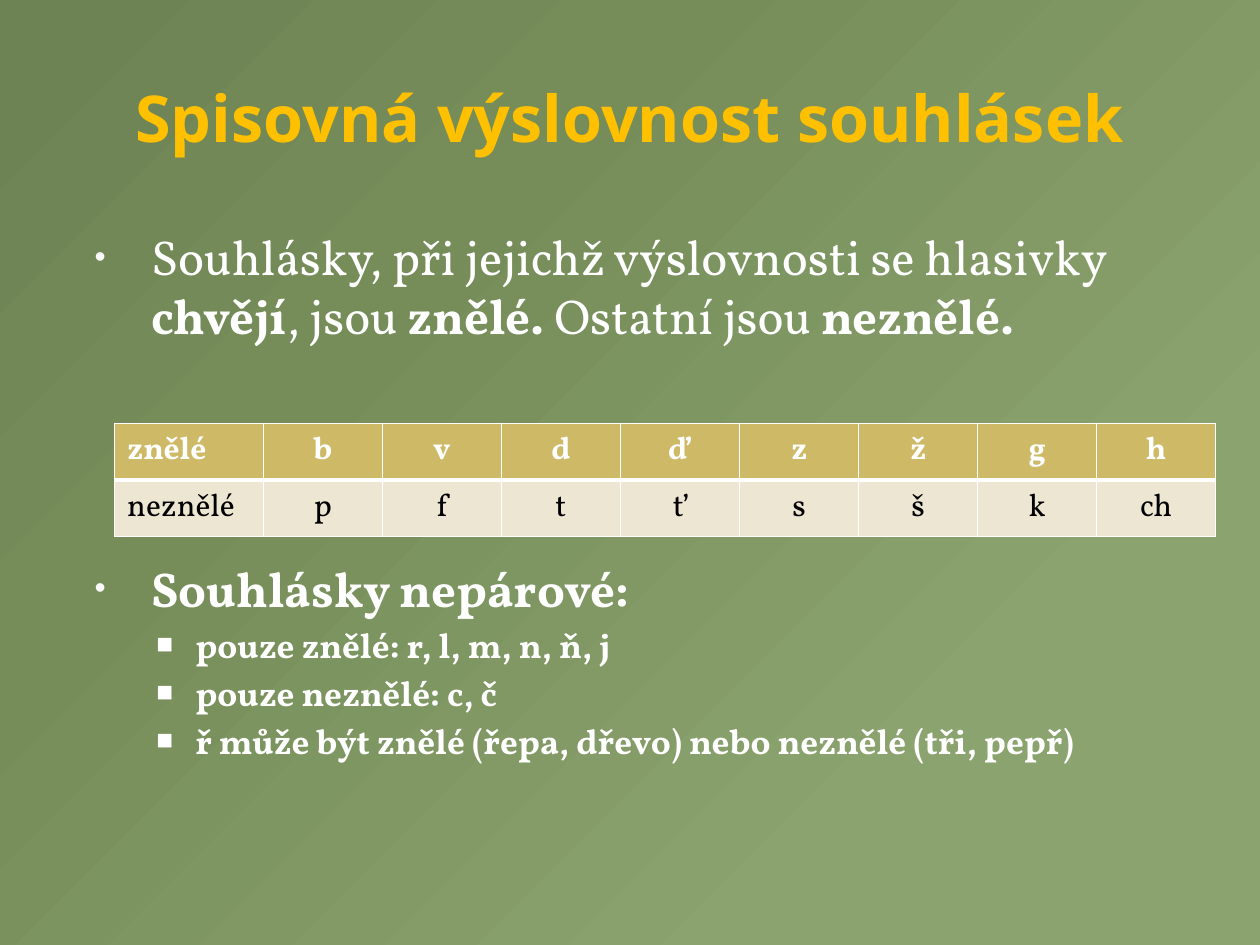
"""Build a slide on the pronunciation of Czech consonants."""
import dataclasses
import pptx
import pptx.dml.color
import pptx.enum.text
import pptx.oxml
import pptx.oxml.ns
import pptx.util

Inches = pptx.util.Inches
Pt = pptx.util.Pt
ALIGN = pptx.enum.text.PP_ALIGN
ANCHOR = pptx.enum.text.MSO_ANCHOR
SERIF = "Vollkorn"
WHITE = "FFFFFF"
NS = pptx.oxml.ns.nsdecls("a")


@dataclasses.dataclass
class Item:
    runs: list[tuple[str, bool]]
    gap: float
    level: int = 0


@dataclasses.dataclass
class Row:
    words: list[str]
    fill: str
    ink: str
    bold: bool
    top: int
    base: int


ITEMS = [
    Item([("Souhlásky, při jejichž výslovnosti se hlasivky ", False),
          ("chvějí", True), (", jsou ", False), ("znělé. ", True),
          ("Ostatní jsou ", False), ("neznělé.", True)], 4.9),
    Item([("Souhlásky nepárové:", True)], 122.3),
    Item([("pouze znělé: r, l, m, n, ň, j", True)], 3.4, 1),
    Item([("pouze neznělé: c, č", True)], 3.4, 1),
    Item([("ř může být znělé (řepa, dřevo) nebo neznělé (tři, pepř)", True)], 3.4, 1),
]
ROWS = [
    Row(["znělé", *"bvdďzžgh"], "CEB966", WHITE, True, 1, 3),
    Row(["neznělé", *"pftťsšk", "ch"], "EDE6D3", "000000", False, 3, 1),
]
STOPS = [(0, "8BA36F"), (23, "8BA36F"), (69, "768D5A"), (97, "6E8354")]


def paint(target, color: str) -> None:
    """Set a colour from a hex string."""
    target.rgb = pptx.dml.color.RGBColor.from_string(color)


def write(para, text: str, *, size: float, color: str = WHITE,
          font: str = SERIF, bold: bool = False) -> None:
    """Add a formatted run to a paragraph."""
    run = para.add_run()
    run.text = text
    run.font.size = Pt(size)
    run.font.name = font
    run.font.bold = bold
    paint(run.font.color, color)


def place(shape, left: float, top: float, width: float, height: float) -> None:
    """Move and size a shape, with its text kept at its own size."""
    shape.left, shape.top = Inches(left), Inches(top)
    shape.width, shape.height = Inches(width), Inches(height)
    shape.text_frame.auto_size = pptx.enum.text.MSO_AUTO_SIZE.NONE
    shape.text_frame.word_wrap = True


def shade(slide) -> None:
    """Fill the background with a gradient from the lower right corner."""
    fill = slide.background.fill
    fill.gradient()
    stops = "".join(f'<a:gs pos="{pos * 1000}"><a:srgbClr val="{color}"/></a:gs>'
                    for pos, color in STOPS)
    grad = pptx.oxml.parse_xml(
        f'<a:gradFill {NS} rotWithShape="1"><a:gsLst>{stops}</a:gsLst>'
        '<a:path path="circle"><a:fillToRect l="100000" t="100000"/></a:path></a:gradFill>')
    old = slide.background._cSld.find(".//" + pptx.oxml.ns.qn("a:gradFill"))
    old.getparent().replace(old, grad)


def bullet(para, level: int) -> None:
    """Give a paragraph its indent and bullet."""
    left, hang, mark, color, size = [(0.6, 0.45, "•", "F9F9F9", 65),
                                     (0.95, 0.31, "■", WHITE, 80)][level]
    props = para._p.get_or_add_pPr()
    props.set("marL", str(Inches(left)))
    props.set("indent", str(-Inches(hang)))
    for part in (f'<a:buClr {NS}><a:srgbClr val="{color}"/></a:buClr>',
                 f'<a:buSzPct {NS} val="{size * 1000}"/>',
                 f'<a:buFont {NS} typeface="Arial"/>',
                 f'<a:buChar {NS} char="{mark}"/>'):
        props.append(pptx.oxml.parse_xml(part))


def listing(shape, items: list[Item]) -> None:
    """Write the bulleted list."""
    frame = shape.text_frame
    frame.vertical_anchor = ANCHOR.TOP
    for num, item in enumerate(items):
        para = frame.add_paragraph() if num else frame.paragraphs[0]
        para.level = item.level
        para.space_before = Pt(item.gap)
        bullet(para, item.level)
        for text, bold in item.runs:
            write(para, text, size=20 if item.level else 28, bold=bold)


def border(cell, top: int, base: int) -> None:
    """Draw white lines around a cell."""
    props = cell._tc.get_or_add_tcPr()
    for num, (side, width) in enumerate(zip("LRTB", (1, 1, top, base))):
        props.insert(num, pptx.oxml.parse_xml(
            f'<a:ln{side} {NS} w="{Pt(width)}"><a:solidFill>'
            f'<a:srgbClr val="{WHITE}"/></a:solidFill></a:ln{side}>'))


def grid(slide, rows: list[Row]) -> None:
    """Draw the table of paired consonants."""
    count = len(rows[0].words)
    table = slide.shapes.add_table(len(rows), count, Inches(0.91), Inches(3.36),
                                   Inches(8.74), Inches(0.82)).table
    table.horz_banding = False
    for num, column in enumerate(table.columns):
        column.width = Inches(0.945 if num else 1.18)
    for line, row in zip(table.rows, rows):
        line.height = Inches(0.41)
        for num, (cell, word) in enumerate(zip(line.cells, row.words)):
            cell.fill.solid()
            paint(cell.fill.fore_color, row.fill)
            border(cell, row.top, row.base)
            para = cell.text_frame.paragraphs[0]
            para.alignment = ALIGN.CENTER if num else ALIGN.LEFT
            write(para, word, size=18, color=row.ink, bold=row.bold)


def main() -> None:
    """Build and save the slide."""
    deck = pptx.Presentation()
    deck.slide_width, deck.slide_height = Inches(10), Inches(7.5)
    slide = deck.slides.add_slide(deck.slide_layouts[1])
    shade(slide)
    title, body = slide.placeholders
    place(title, 0.5, 0.3, 9, 1.25)
    title.text_frame.vertical_anchor = ANCHOR.MIDDLE
    head = title.text_frame.paragraphs[0]
    head.alignment = ALIGN.CENTER
    write(head, "Spisovná výslovnost souhlásek", size=36.9, color="FFC000",
          font="Open Sans", bold=True)
    place(body, 0.5, 1.75, 9, 5.15)
    listing(body, ITEMS)
    grid(slide, ROWS)
    deck.save("out.pptx")


if __name__ == "__main__":
    main()
